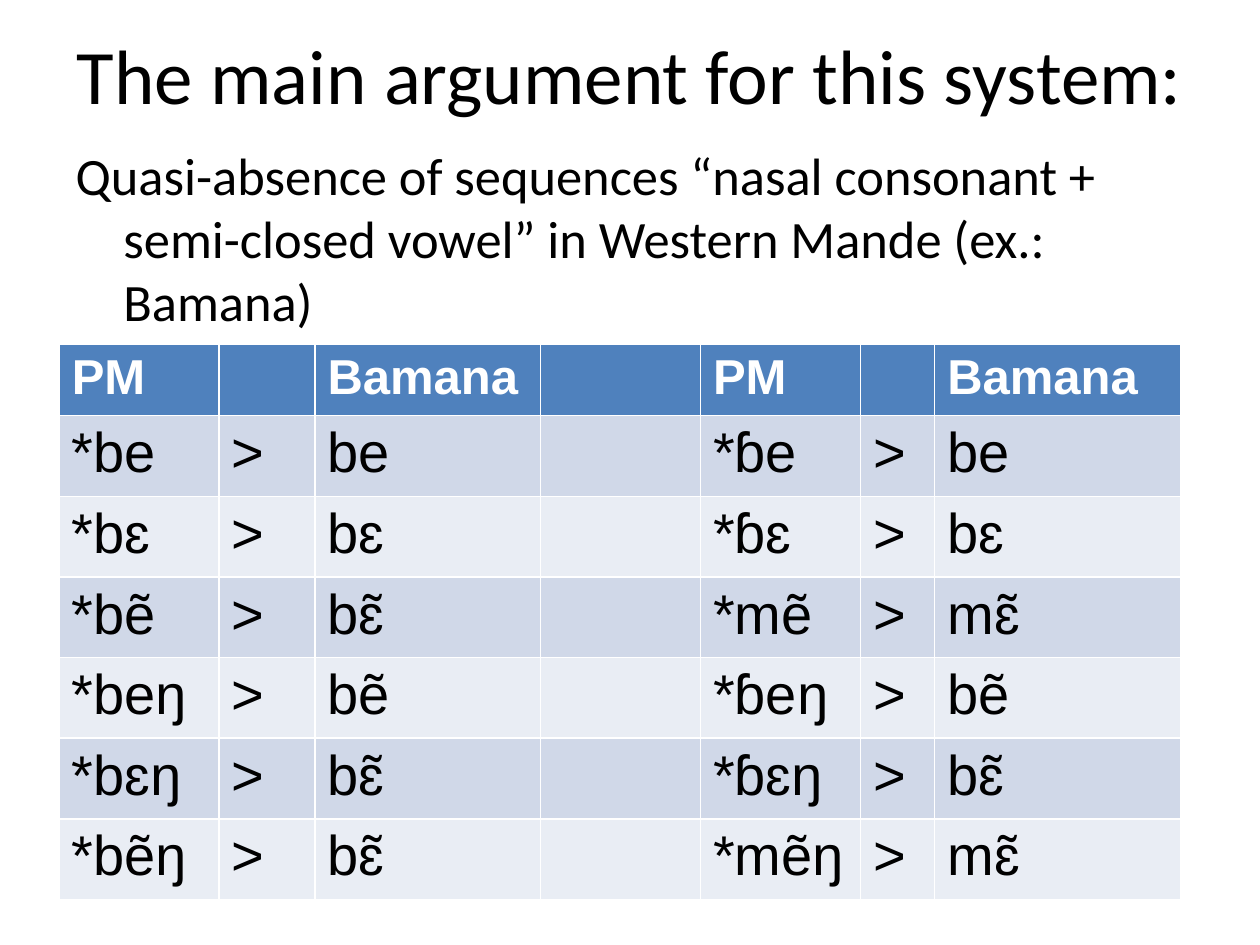
"""Build a slide that sets Proto-Mande forms beside their Bamana reflexes."""
from lxml.etree import SubElement
from pptx import Presentation
from pptx.dml.color import RGBColor
from pptx.enum.text import MSO_ANCHOR, MSO_AUTO_SIZE, PP_ALIGN
from pptx.oxml.ns import qn
from pptx.util import Inches, Pt

BLACK = RGBColor(0x00, 0x00, 0x00)
WHITE = RGBColor(0xFF, 0xFF, 0xFF)
BLUE = RGBColor(0x4F, 0x81, 0xBD)
BANDS = RGBColor(0xE9, 0xED, 0xF4), RGBColor(0xD0, 0xD8, 0xE8)

WIDE, HIGH = Inches(10), Inches(7.5)
COLS = [1.27, 0.76, 1.79, 1.27, 1.27, 0.59, 1.95]
HEAD, ROW = 0.57, 0.64
PAIRS = [
    ("PM", "Bamana", "PM", "Bamana"),
    ("*be", "be", "*ɓe", "be"),
    ("*bɛ", "bɛ", "*ɓɛ", "bɛ"),
    ("*bẽ", "bɛ̃", "*mẽ", "mɛ̃"),
    ("*beŋ", "bẽ", "*ɓeŋ", "bẽ"),
    ("*bɛŋ", "bɛ̃", "*ɓɛŋ", "bɛ̃"),
    ("*bẽŋ", "bɛ̃", "*mẽŋ", "mɛ̃"),
]


def write(frame, text, size, font="Calibri", color=BLACK, bold=False, align=PP_ALIGN.LEFT):
    para = frame.paragraphs[0]
    para.alignment = align
    run = para.add_run()
    run.text = text
    run.font.name = font
    run.font.size = Pt(size)
    run.font.bold = bold
    run.font.color.rgb = color
    return para


def place(shape, top, height):
    shape.left, shape.width = int(WIDE * 0.05), int(WIDE * 0.9)
    shape.top, shape.height = int(HIGH * top), int(HIGH * height)
    shape.text_frame.word_wrap = True
    shape.text_frame.auto_size = MSO_AUTO_SIZE.NONE
    return shape.text_frame


deck = Presentation()
deck.slide_width, deck.slide_height = WIDE, HIGH
slide = deck.slides.add_slide(deck.slide_layouts[1])

title = place(slide.shapes.title, 0, 0.156)
title.vertical_anchor = MSO_ANCHOR.MIDDLE
write(title, "The main argument for this system:", 44, align=PP_ALIGN.CENTER)

body = place(slide.placeholders[1], 0.145, 0.748)
claim = write(
    body,
    "Quasi-absence of sequences “nasal consonant + semi-closed vowel” "
    "in Western Mande (ex.: Bamana)",
    30,
)
props = claim._p.get_or_add_pPr()
props.set("marL", str(Inches(0.38)))
props.set("indent", str(-Inches(0.38)))
SubElement(props, qn("a:buNone"))

tall = HEAD + ROW * (len(PAIRS) - 1)
grid = slide.shapes.add_table(
    len(PAIRS), len(COLS), Inches(0.47), Inches(2.73), Inches(sum(COLS)), Inches(tall)
).table
for col, width in zip(grid.columns, COLS):
    col.width = Inches(width)

for r, (left, mid, right, end) in enumerate(PAIRS):
    top = r == 0
    grid.rows[r].height = Inches(HEAD if top else ROW)
    sign = "" if top else ">"
    for c, text in enumerate([left, sign, mid, "", right, sign, end]):
        cell = grid.cell(r, c)
        cell.fill.solid()
        cell.fill.fore_color.rgb = BLUE if top else BANDS[r % 2]
        if text:
            write(cell.text_frame, text, 28 if top else 32, font="Arial",
                  color=WHITE if top else BLACK, bold=top)

deck.save("out.pptx")
